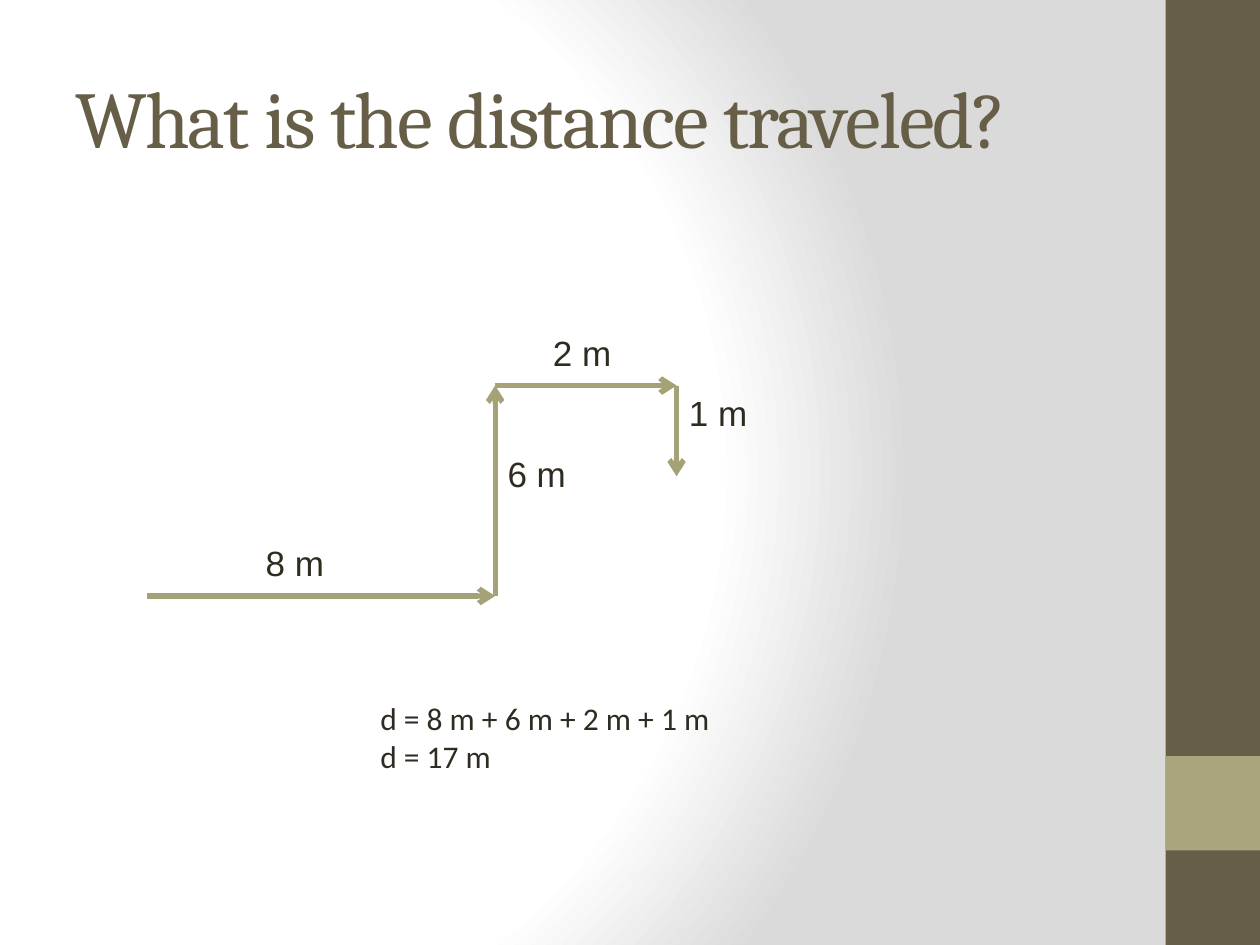
"""Build a slide that adds up the distance along a four-leg route."""
from dataclasses import dataclass

from lxml import etree
from pptx import Presentation
from pptx.dml.color import RGBColor
from pptx.enum.shapes import MSO_CONNECTOR, MSO_SHAPE
from pptx.enum.text import MSO_ANCHOR
from pptx.oxml import parse_xml
from pptx.oxml.ns import nsdecls, qn
from pptx.util import Inches, Pt

STRAIGHT = MSO_CONNECTOR.STRAIGHT
RECTANGLE = MSO_SHAPE.RECTANGLE
MIDDLE = MSO_ANCHOR.MIDDLE
TOP = MSO_ANCHOR.TOP


@dataclass(frozen=True)
class Theme:
    brown: str = "675E47"
    olive: str = "A9A57C"
    arrow: str = "A6A278"
    ink: str = "2F2B20"
    light: str = "FFFFFF"
    shade: str = "DADADA"
    title_size: int = 46
    label_size: int = 20
    body_size: int = 18
    arrow_width: int = 3


theme = Theme()


def add_text(shapes, place, lines, font_name, size, color, anchor=TOP):
    box = shapes.add_textbox(*map(Inches, place))
    frame = box.text_frame
    frame.word_wrap = True
    frame.vertical_anchor = anchor
    frame.text = "\n".join(lines)
    for para in frame.paragraphs:
        para.font.name = font_name
        para.font.size = Pt(size)
        para.font.color.rgb = RGBColor.from_string(color)
    return box


deck = Presentation()
deck.slide_width = Inches(10)
deck.slide_height = Inches(7.5)
page = deck.slides.add_slide(deck.slide_layouts[6])

stops = "".join(
    f'<a:gs pos="{percent * 1000}"><a:srgbClr val="{color}"/></a:gs>'
    for percent, color in ((0, theme.light), (75, theme.light), (100, theme.shade))
)
background = parse_xml(
    f'<p:bg {nsdecls("p", "a")}><p:bgPr><a:gradFill rotWithShape="1">'
    f'<a:gsLst>{stops}</a:gsLst><a:path path="circle">'
    '<a:fillToRect l="20000" t="50000" r="100000" b="50000"/></a:path>'
    '</a:gradFill><a:effectLst/></p:bgPr></p:bg>'
)
page.element.cSld.insert(0, background)

for top, height, color in ((0, 7.5, theme.brown), (6, 0.75, theme.olive)):
    band = page.shapes.add_shape(
        RECTANGLE, Inches(9.25), Inches(top), Inches(0.75), Inches(height)
    )
    band.shadow.inherit = False
    band.fill.solid()
    band.fill.fore_color.rgb = RGBColor.from_string(color)
    band.line.fill.background()

diagram = page.shapes.add_group_shape()
route = [(1.17, 4.73), (3.93, 4.73), (3.93, 3.06), (5.37, 3.06), (5.37, 3.78)]
for start, end in zip(route, route[1:]):
    leg = diagram.shapes.add_connector(STRAIGHT, *map(Inches, start + end))
    leg.line.color.rgb = RGBColor.from_string(theme.arrow)
    leg.line.width = Pt(theme.arrow_width)
    properties = leg.element.spPr
    etree.SubElement(properties.find(qn("a:ln")), qn("a:tailEnd"), type="arrow")
    etree.SubElement(properties, qn("a:effectLst"))

leg_labels = [
    ("8 m", 2.01, 4.25),
    ("6 m", 3.93, 3.54),
    ("2 m", 4.29, 2.58),
    ("1 m", 5.37, 3.06),
]
for label, left, top in leg_labels:
    add_text(diagram.shapes, (left, top, 0.96, 0.58), [label],
             "Arial", theme.label_size, theme.ink)

add_text(page.shapes, (2.92, 5.5, 5, 0.77),
         ["d = 8 m + 6 m + 2 m + 1 m", "d = 17 m"],
         "Calibri", theme.body_size, theme.ink)

title = add_text(page.shapes, (0.5, 0.3, 8.33, 1.25),
                 ["What is the distance traveled?"],
                 "Cambria", theme.title_size, theme.brown, MIDDLE)
title_span = title.text_frame.paragraphs[0].runs[0]
title_span.font.element.set("spc", "-100") if hasattr(
    title_span.font, "element"
) else title_span._r.get_or_add_rPr().set("spc", "-100")

deck.save("out.pptx")
